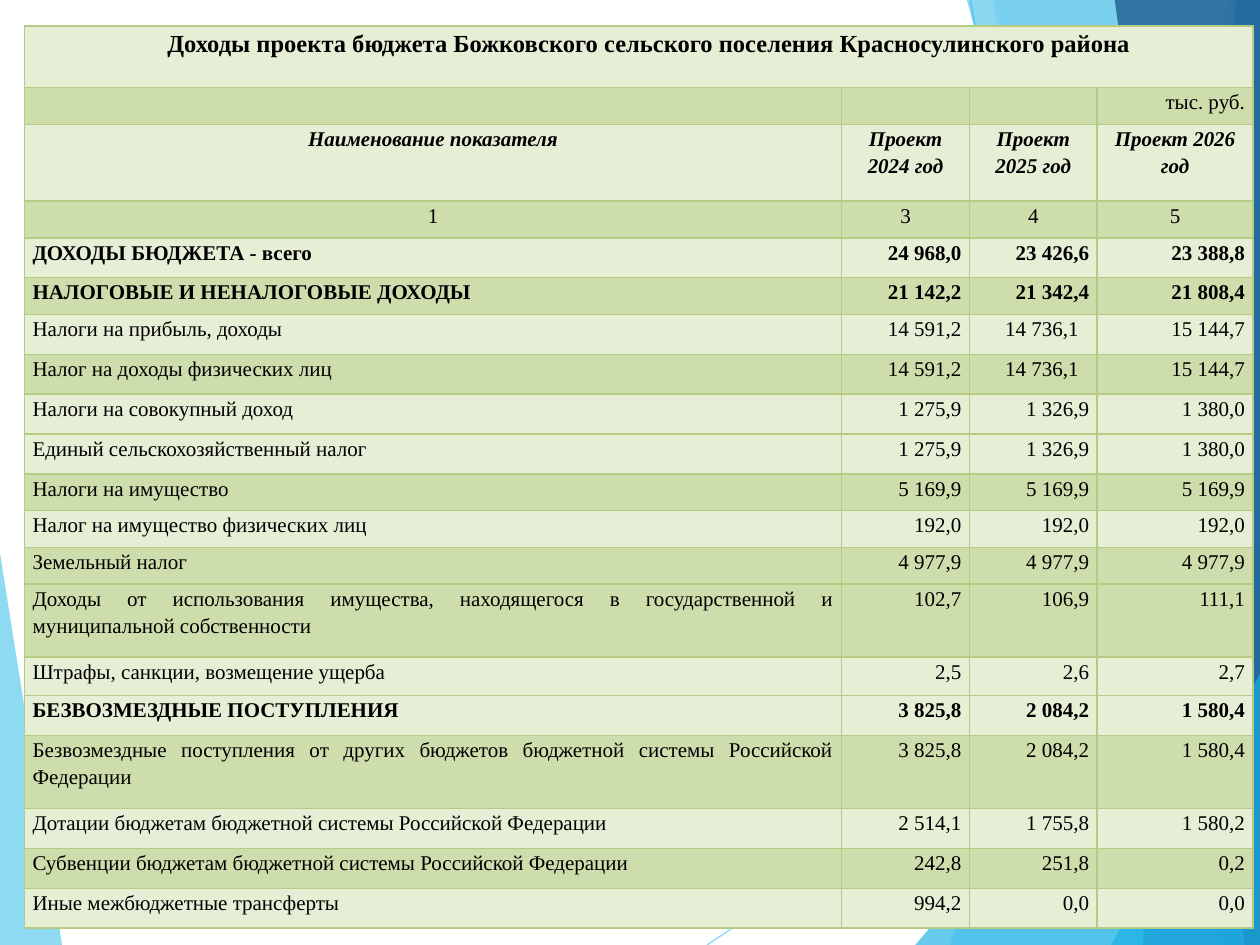
"""Build a slide with the budget revenue table of a rural settlement."""
from lxml.etree import SubElement
from pptx import Presentation
from pptx.dml.color import RGBColor
from pptx.enum.shapes import MSO_CONNECTOR
from pptx.enum.text import PP_ALIGN
from pptx.oxml import parse_xml
from pptx.oxml.ns import nsdecls, qn
from pptx.util import Pt

THEME = {
    "light": "E6EED5", "dark": "CDDDAC", "border": "B3CC82", "text": "000000",
    "sky": "5FCBEF", "azure": "17B0E4", "blue": "2E83C3", "navy": "226292",
    "font": "Times New Roman", "title_size": 14, "body_size": 12,
}
WIDTH, HEIGHT = 720, 540
TABLE_LEFT, TABLE_TOP = 14, 15
COLUMN_WIDTHS = [467, 73, 73, 73]
SIDE_MARGIN = 4.6
TITLE_INDENT = 77
TRAILING_GAP = 6

LEFT, CENTER, RIGHT, JUSTIFY = PP_ALIGN.LEFT, PP_ALIGN.CENTER, PP_ALIGN.RIGHT, PP_ALIGN.JUSTIFY
PLAIN = {"bold": False, "italic": False}
BOLD = {"bold": True, "italic": False}
HEADING = {"bold": True, "italic": True}
TITLE = {"bold": True, "italic": False, "size": Pt(THEME["title_size"])}

ROWS = [
    (35.1, "light", TITLE, LEFT, ["Доходы проекта бюджета Божковского сельского поселения Красносулинского района", "", "", ""]),
    (21, "dark", PLAIN, LEFT, ["", "", "", "тыс. руб."]),
    (43.9, "light", HEADING, CENTER, ["Наименование показателя", "Проект 2024 год", "Проект 2025 год", "Проект 2026 год"]),
    (21, "dark", PLAIN, CENTER, ["1", "3", "4", "5"]),
    (22.8, "light", BOLD, LEFT, ["ДОХОДЫ БЮДЖЕТА - всего", "24 968,0", "23 426,6", "23 388,8"]),
    (21, "dark", BOLD, LEFT, ["НАЛОГОВЫЕ И НЕНАЛОГОВЫЕ ДОХОДЫ", "21 142,2", "21 342,4", "21 808,4"]),
    (22.8, "light", PLAIN, LEFT, ["Налоги на прибыль, доходы", "14 591,2", "14 736,1", "15 144,7"]),
    (22.8, "dark", PLAIN, LEFT, ["Налог на доходы физических лиц", "14 591,2", "14 736,1", "15 144,7"]),
    (22.8, "light", PLAIN, LEFT, ["Налоги на совокупный доход", "1 275,9", "1 326,9", "1 380,0"]),
    (22.8, "light", PLAIN, LEFT, ["Единый сельскохозяйственный налог", "1 275,9", "1 326,9", "1 380,0"]),
    (21, "dark", PLAIN, LEFT, ["Налоги на имущество", "5 169,9", "5 169,9", "5 169,9"]),
    (21, "light", PLAIN, LEFT, ["Налог на имущество физических лиц", "192,0", "192,0", "192,0"]),
    (21, "dark", PLAIN, LEFT, ["Земельный налог", "4 977,9", "4 977,9", "4 977,9"]),
    (41.8, "dark", PLAIN, JUSTIFY, ["Доходы от использования имущества, находящегося в государственной и муниципальной собственности", "102,7", "106,9", "111,1"]),
    (21.9, "light", PLAIN, JUSTIFY, ["Штрафы, санкции, возмещение ущерба", "2,5", "2,6", "2,7"]),
    (22.8, "light", BOLD, JUSTIFY, ["БЕЗВОЗМЕЗДНЫЕ ПОСТУПЛЕНИЯ", "3 825,8", "2 084,2", "1 580,4"]),
    (41.8, "dark", PLAIN, JUSTIFY, ["Безвозмездные поступления от других бюджетов бюджетной системы Российской Федерации", "3 825,8", "2 084,2", "1 580,4"]),
    (22.8, "light", PLAIN, JUSTIFY, ["Дотации бюджетам бюджетной системы Российской Федерации", "2 514,1", "1 755,8", "1 580,2"]),
    (22.8, "dark", PLAIN, JUSTIFY, ["Субвенции бюджетам бюджетной системы Российской Федерации", "242,8", "251,8", "0,2"]),
    (22.8, "light", PLAIN, JUSTIFY, ["Иные межбюджетные трансферты", "994,2", "0,0", "0,0"]),
]
INSET_VALUES = {"14 736,1"}

BACKDROP_LINES = [((404, HEIGHT), (WIDTH, 329)), ((554.5, 0), (651, HEIGHT))]


def band(top_x, bottom_x):
    """Return the corners of a full-height facet on the right edge."""
    return [(top_x, 0), (bottom_x, HEIGHT), (WIDTH, HEIGHT), (WIDTH, 0)]


def wedge(bottom_x, right_y):
    """Return the corners of a triangle in the bottom right corner."""
    return [(bottom_x, HEIGHT), (WIDTH, right_y), (WIDTH, HEIGHT)]


LEFT_FACET = ([(0, 316), (35.5, HEIGHT), (0, HEIGHT)], "sky", 70)
RIGHT_FACETS = [
    (band(702, 543), "sky", 36),
    (band(567.5, 661.5), "sky", 20),
    (wedge(523, 309), "azure", 66),
    (band(552.5, 698.5), "azure", 50),
    (band(706.5, 653), "blue", 70),
    (band(637, 711.5), "navy", 82),
    (wedge(635, 385), "azure", 66),
]


def color(name):
    """Return a theme colour."""
    return RGBColor.from_string(THEME[name])


def apply(target, values):
    """Set attributes from a dict."""
    for name, value in values.items():
        setattr(target, name, value)


def set_opacity(shape, percent):
    """Give the shape's only colour an opacity."""
    for element in shape._element.spPr.iter(qn("a:srgbClr")):
        SubElement(element, qn("a:alpha")).set("val", str(percent * 1000))


def add_facet(slide, points, fill, opacity):
    """Draw one translucent polygon."""
    corners = [(Pt(x), Pt(y)) for x, y in points]
    builder = slide.shapes.build_freeform(*corners[0])
    builder.add_line_segments(corners[1:], close=True)
    shape = builder.convert_to_shape()
    shape.shadow.inherit = False
    shape.fill.solid()
    shape.fill.fore_color.rgb = color(fill)
    shape.line.fill.background()
    set_opacity(shape, opacity)


def add_backdrop_line(slide, start, end):
    """Draw one thin translucent line."""
    ends = [Pt(value) for value in (*start, *end)]
    connector = slide.shapes.add_connector(MSO_CONNECTOR.STRAIGHT, *ends)
    connector.line.color.rgb = color("sky")
    connector.line.width = Pt(0.75)
    SubElement(connector._element.spPr, qn("a:effectLst"))
    set_opacity(connector, 70)


def add_borders(cell):
    """Outline a cell on all four sides."""
    properties = cell._tc.get_or_add_tcPr()
    for index, side in enumerate(("lnL", "lnR", "lnT", "lnB")):
        properties.insert(index, parse_xml(
            f'<a:{side} {nsdecls("a")} w="{Pt(1)}"><a:solidFill>'
            f'<a:srgbClr val="{THEME["border"]}"/></a:solidFill></a:{side}>'))


def fill_cell(cell, text, shade, style, alignment):
    """Write and format one table cell."""
    left = SIDE_MARGIN + (TITLE_INDENT if style is TITLE else 0)
    right = SIDE_MARGIN + (TRAILING_GAP if text in INSET_VALUES else 0)
    apply(cell, {"margin_left": Pt(left), "margin_right": Pt(right),
                 "margin_top": 0, "margin_bottom": 0})
    cell.fill.solid()
    cell.fill.fore_color.rgb = color(shade)
    add_borders(cell)
    paragraph = cell.text_frame.paragraphs[0]
    apply(paragraph, {"alignment": alignment, "line_spacing": 1.15})
    size = Pt(THEME["body_size"])
    if text:
        run = paragraph.add_run()
        run.text = text
        apply(run.font, {"name": THEME["font"], "size": size, **style})
        run.font.color.rgb = color("text")
    else:
        SubElement(paragraph._p, qn("a:endParaRPr")).set("sz", str(size.centipoints))


def add_revenue_table(slide):
    """Add the table of revenues by year."""
    frame = slide.shapes.add_table(
        len(ROWS), len(COLUMN_WIDTHS), Pt(TABLE_LEFT), Pt(TABLE_TOP),
        Pt(sum(COLUMN_WIDTHS)), Pt(sum(row[0] for row in ROWS)))
    table = frame.table
    apply(table, {"first_row": False, "horz_banding": False})
    for column, width in zip(table.columns, COLUMN_WIDTHS):
        column.width = Pt(width)
    for row, (height, shade, style, name_alignment, texts) in zip(table.rows, ROWS):
        row.height = Pt(height)
        value_alignment = CENTER if name_alignment == CENTER else RIGHT
        for index, (cell, text) in enumerate(zip(row.cells, texts)):
            alignment = value_alignment if index else name_alignment
            fill_cell(cell, text, shade, style, alignment)
    table.cell(0, 0).merge(table.cell(0, len(COLUMN_WIDTHS) - 1))


def main():
    """Build and save the presentation."""
    presentation = Presentation()
    apply(presentation, {"slide_width": Pt(WIDTH), "slide_height": Pt(HEIGHT)})
    slide = presentation.slides.add_slide(presentation.slide_layouts[6])
    add_facet(slide, *LEFT_FACET)
    for start, end in BACKDROP_LINES:
        add_backdrop_line(slide, start, end)
    for facet in RIGHT_FACETS:
        add_facet(slide, *facet)
    add_revenue_table(slide)
    presentation.save("out.pptx")


if __name__ == "__main__":
    main()
